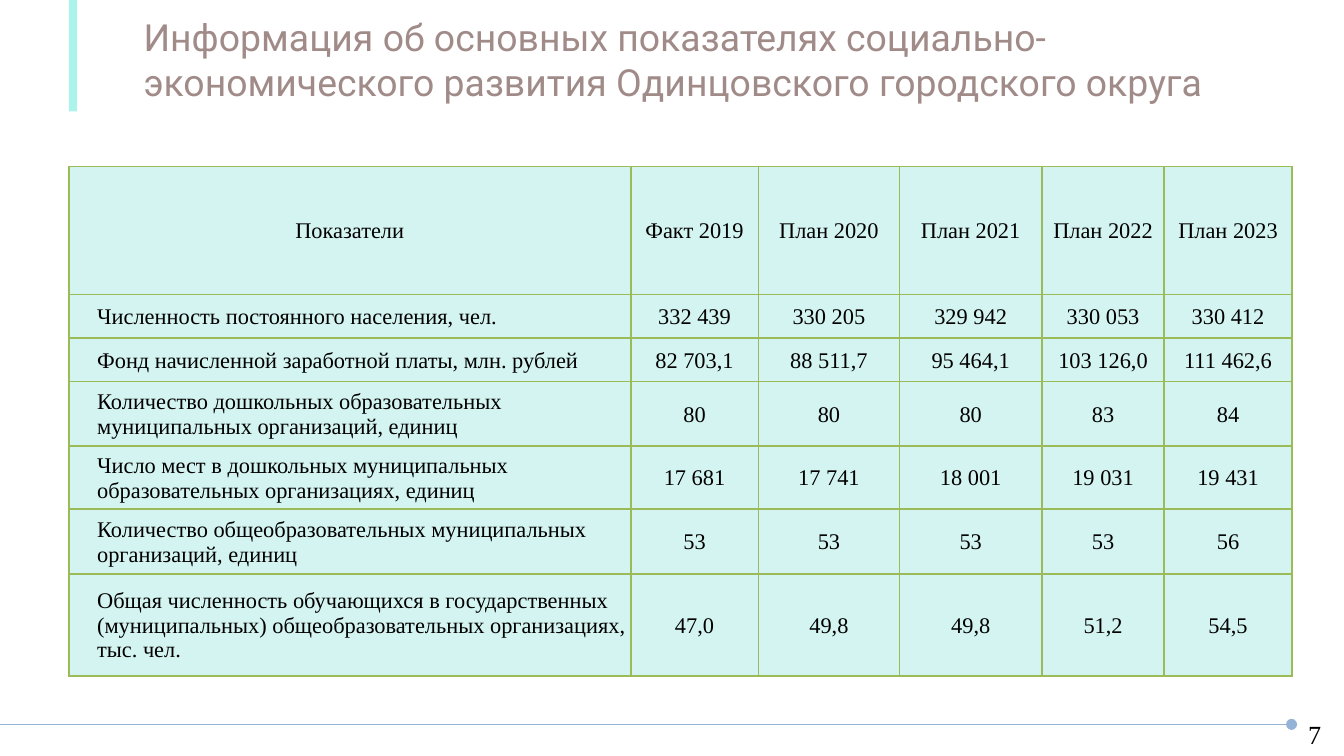
import lxml.etree
import pptx
import pptx.dml.color
import pptx.enum.dml
import pptx.enum.shapes
import pptx.enum.text
import pptx.oxml.ns
import pptx.util

qn = pptx.oxml.ns.qn
rgb = pptx.dml.color.RGBColor.from_string
ALIGN = pptx.enum.text.PP_ALIGN
MIDDLE = pptx.enum.text.MSO_ANCHOR.MIDDLE

THEME = {
    "title": {"name": "Roboto", "size": 20, "color": "A08B88"},
    "body": {"name": "Times New Roman", "size": 12, "color": "000000"},
    "page": {"name": "Times New Roman", "size": 14, "color": "000000"},
    "cell": "D4F4F2",
    "grid": "9BBB59",
    "accent": "ACF3EB",
    "footer": "95B3D7",
}

deck = pptx.Presentation()
deck.slide_width = pptx.util.Inches(10)
deck.slide_height = deck.slide_width * 9 // 16
slide = deck.slides.add_slide(deck.slide_layouts[6])


def span(*shares):
    """Turn percentages of the slide's width into lengths."""
    return [round(deck.slide_width * share / 100) for share in shares]


def write(frame, text, style, align=ALIGN.LEFT):
    frame.word_wrap = True
    paragraph = frame.paragraphs[0]
    paragraph.alignment = align
    run = paragraph.add_run()
    run.text = text
    look = THEME[style]
    for key, value in {"name": look["name"], "size": pptx.util.Pt(look["size"])}.items():
        setattr(run.font, key, value)
    run.font.color.rgb = rgb(look["color"])


# Footer rule with a round end
left, level, right = span(0, 53.9, 96.1)
rule = slide.shapes.add_connector(
    pptx.enum.shapes.MSO_CONNECTOR.STRAIGHT, left, level, right, level)
rule.line.color.rgb = rgb(THEME["footer"])
rule.line.width = pptx.util.Pt(0.75)
lxml.etree.SubElement(rule.line._get_or_add_ln(), qn("a:tailEnd"), type="oval")
lxml.etree.SubElement(rule._element.spPr, qn("a:effectLst"))

# Heading and page number
heading = slide.shapes.add_textbox(*span(9.7, 0.6, 86.4, 7.7)).text_frame
write(heading, "Информация об основных показателях социально-экономического "
               "развития Одинцовского городского округа", "title")

page = slide.shapes.add_textbox(*span(96.35, 53.5, 2.9, 2.2)).text_frame
page.vertical_anchor = MIDDLE
write(page, "7", "page", ALIGN.CENTER)

# Indicators by year
indicators = [
    ("Показатели", "Факт 2019", "План 2020", "План 2021", "План 2022", "План 2023"),
    ("Численность постоянного населения, чел.",
     "332 439", "330 205", "329 942", "330 053", "330 412"),
    ("Фонд начисленной заработной платы, млн. рублей",
     "82 703,1", "88 511,7", "95 464,1", "103 126,0", "111 462,6"),
    ("Количество дошкольных образовательных муниципальных организаций, единиц",
     "80", "80", "80", "83", "84"),
    ("Число мест в дошкольных муниципальных образовательных организациях, единиц",
     "17 681", "17 741", "18 001", "19 031", "19 431"),
    ("Количество общеобразовательных муниципальных организаций, единиц",
     "53", "53", "53", "53", "56"),
    ("Общая численность обучающихся в государственных (муниципальных) "
     "общеобразовательных организациях, тыс. чел.",
     "47,0", "49,8", "49,8", "51,2", "54,5"),
]
column_shares = [41.8, 9.5, 10.5, 10.6, 9.1, 9.5]
row_shares = [9.5, 3.25, 3.25, 4.8, 4.7, 4.8, 7.6]

table = slide.shapes.add_table(
    len(row_shares), len(column_shares),
    *span(5.13, 12.4, sum(column_shares), sum(row_shares))).table
table.first_row = table.horz_banding = False
for column, width in zip(table.columns, span(*column_shares)):
    column.width = width
for row, height in zip(table.rows, span(*row_shares)):
    row.height = height

edge, indent = span(0.1, 2.1)
for r, record in enumerate(indicators):
    for c, text in enumerate(record):
        cell = table.cell(r, c)
        is_label = r > 0 and c == 0
        layout = {
            "vertical_anchor": MIDDLE,
            "margin_left": indent if is_label else edge,
            "margin_right": edge,
            "margin_top": edge,
            "margin_bottom": 0,
        }
        for key, value in layout.items():
            setattr(cell, key, value)
        write(cell.text_frame, text, "body", ALIGN.LEFT if is_label else ALIGN.CENTER)
        borders = cell._tc.get_or_add_tcPr()
        for side in ("a:lnL", "a:lnR", "a:lnT", "a:lnB"):
            border = lxml.etree.SubElement(borders, qn(side), w=str(pptx.util.Pt(1)))
            paint = lxml.etree.SubElement(border, qn("a:solidFill"))
            lxml.etree.SubElement(paint, qn("a:srgbClr"), val=THEME["grid"])
        cell.fill.solid()
        cell.fill.fore_color.rgb = rgb(THEME["cell"])

# Accent bar beside the heading
accent = slide.shapes.add_shape(
    pptx.enum.shapes.MSO_SHAPE.RECTANGLE, *span(5.13, 0, 0.6, 8.3))
accent.shadow.inherit = False
accent.fill.solid()
accent.fill.fore_color.rgb = rgb(THEME["accent"])
accent.line.fill.background()

deck.save("out.pptx")
